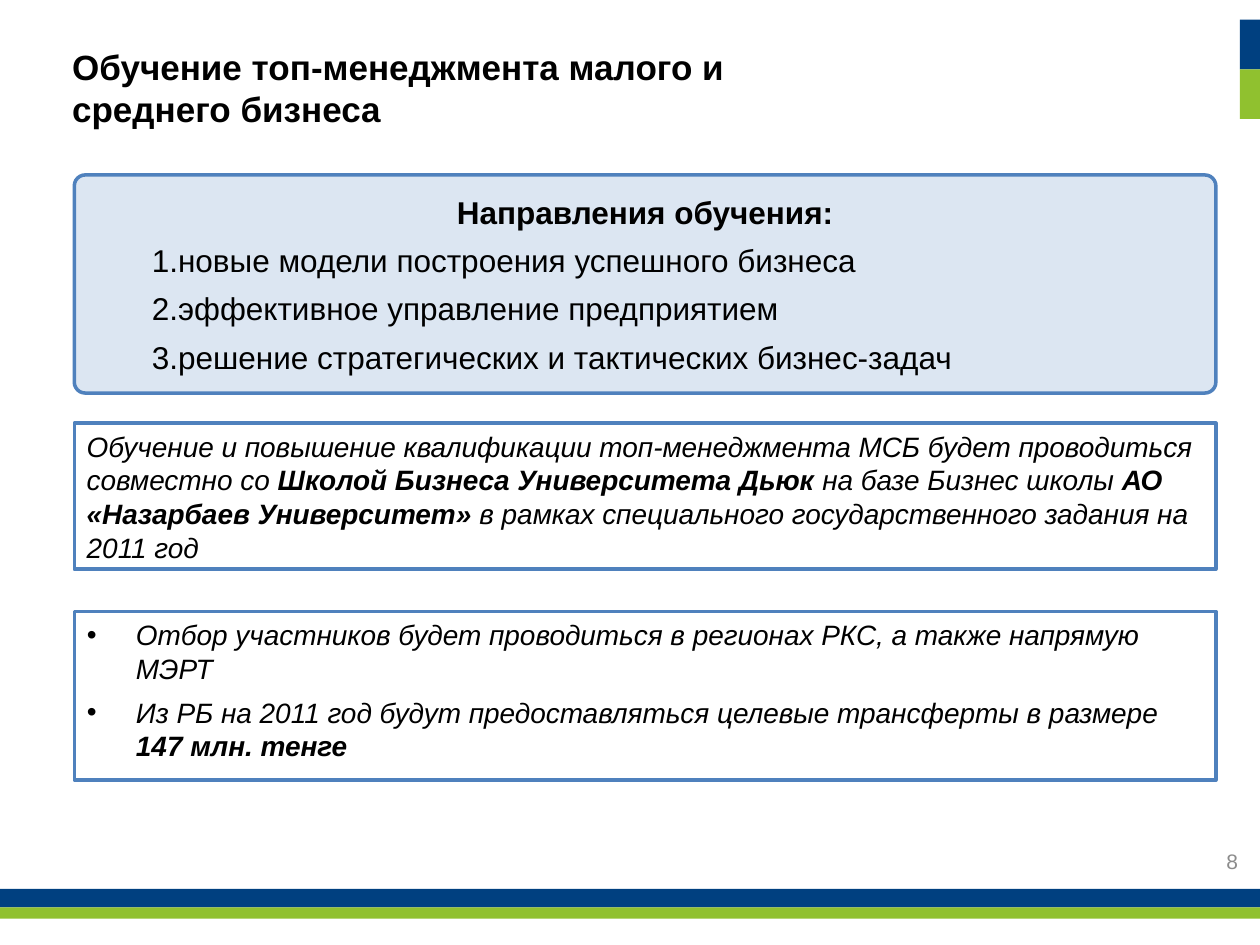
from lxml.etree import SubElement
from pptx import Presentation
from pptx.dml.color import RGBColor
from pptx.enum.shapes import MSO_SHAPE
from pptx.enum.text import MSO_ANCHOR, MSO_AUTO_SIZE, PP_ALIGN
from pptx.oxml.ns import qn
from pptx.util import Pt

NAVY, GREEN, BLUE, PALE = "004080", "90C12F", "4F81BD", "DCE6F2"
BLACK, WHITE, GREY = "000000", "FFFFFF", "8C8C8C"

# Each paragraph is a list of (text, bold) runs.
TITLE = [("Обучение топ-менеджмента малого и среднего бизнеса", True)]
HEADING = [("Направления обучения:", True)]
DIRECTIONS = [
    [("новые модели построения успешного бизнеса", False)],
    [("эффективное управление предприятием", False)],
    [("решение стратегических и тактических бизнес-задач", False)],
]
PARTNERS = [
    ("Обучение и повышение квалификации топ-менеджмента МСБ будет проводиться совместно со ", False),
    ("Школой Бизнеса Университета Дьюк ", True),
    ("на базе Бизнес школы ", False),
    ("АО «Назарбаев Университет»", True),
    (" в рамках специального государственного задания на 2011 год", False),
]
TERMS = [
    [("Отбор участников будет проводиться в регионах РКС, а также напрямую МЭРТ", False)],
    [("Из РБ на 2011 год будут предоставляться целевые трансферты в размере ", False),
     ("147 млн. тенге", True)],
]
PAGE_NUMBER = [("8", False)]

# left, top, width, height in points
BARS = [
    (0, 508, 720, 10.6, NAVY),
    (0, 518.6, 720, 6.4, GREEN),
    (708.5, 11.3, 11.5, 28.4, NAVY),
    (708.5, 39.7, 11.5, 28.3, GREEN),
]
BOX_LEFT, BOX_WIDTH = 42.5, 652.3


def rgb(value):
    return RGBColor.from_string(value)


def place(shape, left, top, width, height):
    shape.left, shape.top, shape.width, shape.height = map(Pt, (left, top, width, height))


def paint(shape, fill, line=None):
    shape.fill.solid()
    shape.fill.fore_color.rgb = rgb(fill)
    if line:
        shape.line.color.rgb = rgb(line)
        shape.line.width = Pt(2)
    else:
        shape.line.fill.background()


def add_shape(kind, left, top, width, height, fill, line=None):
    shape = slide.shapes.add_shape(kind, Pt(left), Pt(top), Pt(width), Pt(height))
    shape.shadow.inherit = False
    paint(shape, fill, line)
    return shape


def set_bullet(paragraph, bullet, margin, indent):
    """Set indents in points; bullet is a character, "1." for numbering or None."""
    props = paragraph._p.get_or_add_pPr()
    props.set("marL", str(Pt(margin)))
    props.set("indent", str(Pt(indent)))
    if bullet == "1.":
        SubElement(props, qn("a:buFont"), typeface="Arial")
        SubElement(props, qn("a:buAutoNum"), type="arabicPeriod")
    elif bullet:
        SubElement(props, qn("a:buFont"), typeface="Arial")
        SubElement(props, qn("a:buChar"), char=bullet)
    else:
        SubElement(props, qn("a:buNone"))


def write(shape, paragraphs, size, anchor=MSO_ANCHOR.TOP, align=PP_ALIGN.LEFT,
          italic=False, color=BLACK, after=6, bullets=()):
    frame = shape.text_frame
    frame.word_wrap = True
    frame.auto_size = MSO_AUTO_SIZE.NONE
    frame.vertical_anchor = anchor
    for index, runs in enumerate(paragraphs):
        paragraph = frame.add_paragraph() if index else frame.paragraphs[0]
        if bullets:
            set_bullet(paragraph, *bullets[index])
        paragraph.alignment = align
        paragraph.space_before = Pt(0)
        paragraph.space_after = Pt(after)
        for text, bold in runs:
            run = paragraph.add_run()
            run.text = text
            font = run.font
            font.name, font.size = "Arial", Pt(size)
            font.bold, font.italic = bold, italic
            font.color.rgb = rgb(color)


prs = Presentation()
prs.slide_width, prs.slide_height = Pt(720), Pt(540)
slide = prs.slides.add_slide(prs.slide_layouts[1])

for left, top, width, height, fill in BARS:
    add_shape(MSO_SHAPE.RECTANGLE, left, top, width, height, fill)

title = slide.shapes.title
place(title, 34, 22.5, 468, 55.5)
write(title, [TITLE], 20, after=3)

directions = add_shape(MSO_SHAPE.ROUNDED_RECTANGLE, BOX_LEFT, 100, BOX_WIDTH, 124.6, PALE, BLUE)
directions.adjustments[0] = 0.05
write(directions, [HEADING] + DIRECTIONS, 18, MSO_ANCHOR.MIDDLE,
      bullets=[(None, 14.4, -14.4)] + [("1.", 14.4, 21)] * len(DIRECTIONS))
directions.text_frame.paragraphs[0].alignment = PP_ALIGN.CENTER

partners = add_shape(MSO_SHAPE.RECTANGLE, BOX_LEFT, 241.8, BOX_WIDTH, 83.5, WHITE, BLUE)
write(partners, [PARTNERS], 16, italic=True)

terms = slide.placeholders[1]
place(terms, BOX_LEFT, 349.4, BOX_WIDTH, 96.4)
paint(terms, WHITE, BLUE)
write(terms, TERMS, 16, italic=True, bullets=[("•", 28, -28)] * len(TERMS))

page_number = slide.shapes.add_textbox(Pt(546.5), Pt(477.5), Pt(168), Pt(28.8))
write(page_number, [PAGE_NUMBER], 12, MSO_ANCHOR.MIDDLE, PP_ALIGN.RIGHT, color=GREY, after=0)

prs.save("out.pptx")
